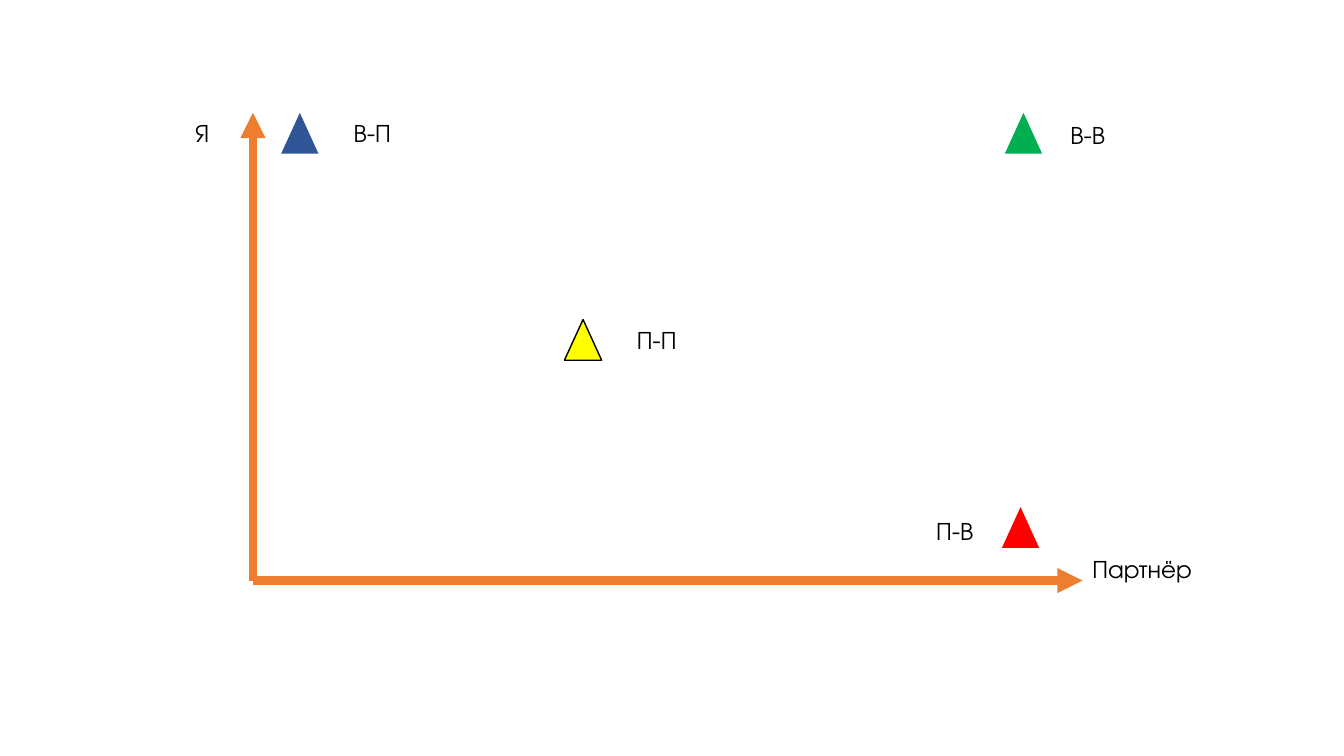
from dataclasses import dataclass
from lxml.etree import SubElement
from pptx import Presentation
from pptx.dml.color import RGBColor
from pptx.enum.shapes import MSO_CONNECTOR, MSO_SHAPE
from pptx.enum.text import MSO_AUTO_SIZE
from pptx.oxml.ns import qn
from pptx.util import Pt


@dataclass(frozen=True)
class Theme:
    font: str = "TeX Gyre Adventor"
    size: float = 18
    ink: str = "000000"
    axis: str = "ED7D31"
    width: float = 6
    blue: str = "2F5597"
    red: str = "FF0000"
    yellow: str = "FFFF00"
    green: str = "00B050"


theme = Theme()
origin = (180.7, 414.7)
ends = [(180.7, 80.6), (773.3, 414.7)]
labels = [
    ("Я", 132.5, 80.6, 27.4),
    ("Партнёр", 773.3, 391.7, 86.4),
    ("В-П", 245.5, 80.6, 46.1),
    ("П-В", 661.7, 364.3, 46.1),
    ("П-П", 447.8, 228.2, 46.8),
    ("В-В", 757.4, 81.4, 44.6),
]
marks = [
    (200.9, 80.6, theme.blue, None),
    (715.7, 362.2, theme.red, None),
    (403.2, 228.2, theme.yellow, theme.ink),
    (717.8, 80.6, theme.green, None),
]
wide, high = 26.6, 29.1


def color(code):
    return RGBColor.from_string(code)


def add_axis(slide, end):
    line = slide.shapes.add_connector(
        MSO_CONNECTOR.STRAIGHT, *map(Pt, origin + end))
    line.line.color.rgb = color(theme.axis)
    line.line.width = Pt(theme.width)
    props = line._element.spPr
    SubElement(props.find(qn("a:ln")), qn("a:tailEnd"), type="triangle")
    SubElement(props, qn("a:effectLst"))


def add_mark(slide, left, top, fill, edge):
    mark = slide.shapes.add_shape(
        MSO_SHAPE.ISOSCELES_TRIANGLE, Pt(left), Pt(top), Pt(wide), Pt(high))
    mark.shadow.inherit = False
    mark.fill.solid()
    mark.fill.fore_color.rgb = color(fill)
    if edge:
        mark.line.color.rgb = color(edge)
        mark.line.width = Pt(1)
    else:
        mark.line.fill.background()


def add_label(slide, text, left, top, width):
    box = slide.shapes.add_textbox(Pt(left), Pt(top), Pt(width), Pt(high))
    frame = box.text_frame
    frame.word_wrap = False
    frame.auto_size = MSO_AUTO_SIZE.SHAPE_TO_FIT_TEXT
    frame.text = text
    font = frame.paragraphs[0].runs[0].font
    font.name = theme.font
    font.size = Pt(theme.size)
    font.color.rgb = color(theme.ink)


def main():
    deck = Presentation()
    deck.slide_width, deck.slide_height = Pt(960), Pt(540)
    slide = deck.slides.add_slide(deck.slide_layouts[6])
    for end in ends:
        add_axis(slide, end)
    for mark in marks:
        add_mark(slide, *mark)
    for label in labels:
        add_label(slide, *label)
    deck.save("out.pptx")


if __name__ == "__main__":
    main()
